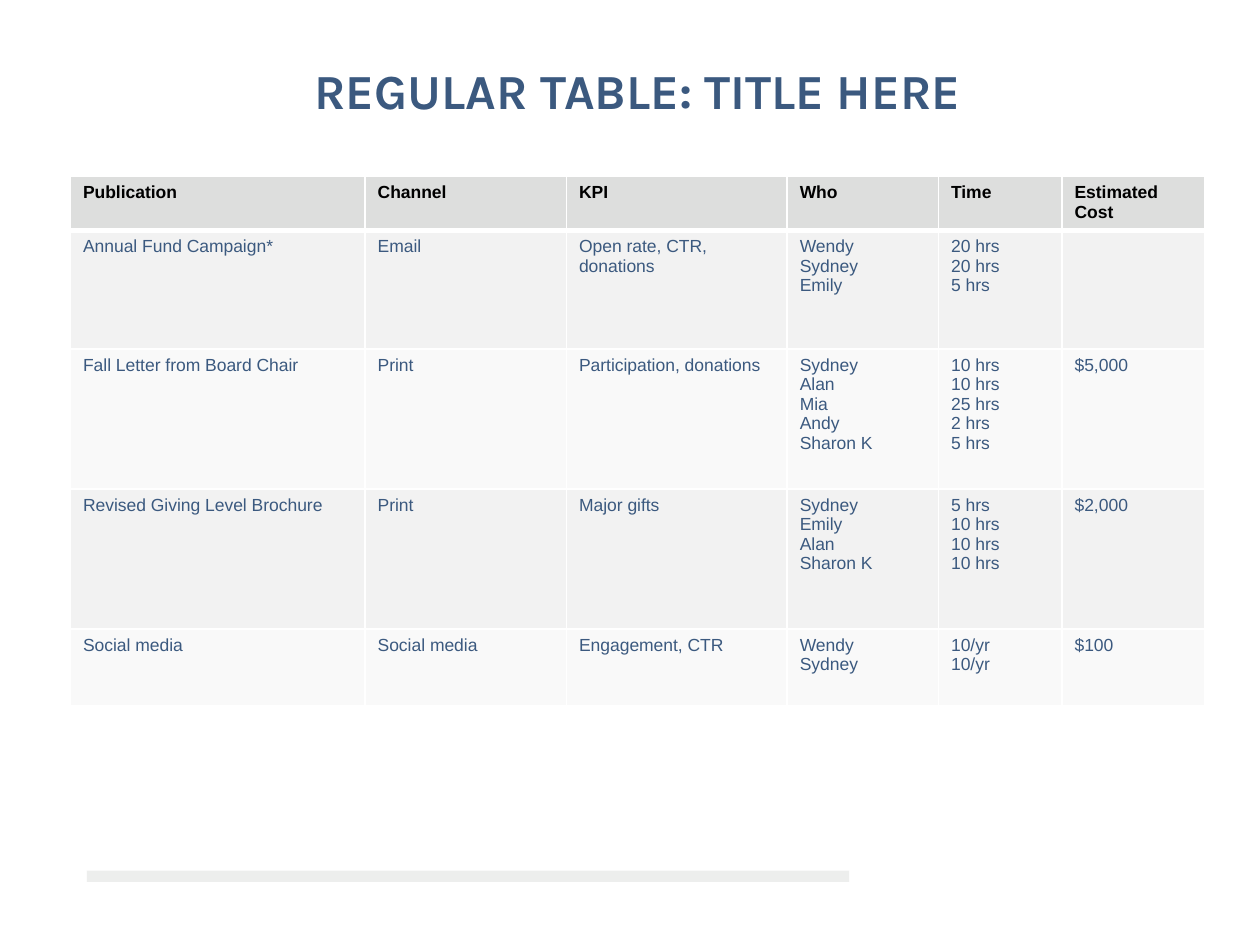
"""Build a slide with a publication planning table."""
import pptx
import pptx.dml.color
import pptx.enum.shapes
import pptx.enum.text
import pptx.oxml
import pptx.oxml.ns
import pptx.util
from pptx.util import Cm

TITLE = "REGULAR TABLE: TITLE HERE"
HEADS = ["Publication", "Channel", "KPI", "Who", "Time", "Estimated Cost"]
ROWS = [
    ["Annual Fund Campaign*", "Email", "Open rate, CTR, donations",
     "Wendy\nSydney\nEmily", "20 hrs\n20 hrs\n5 hrs", ""],
    ["Fall Letter from Board Chair", "Print", "Participation, donations",
     "Sydney\nAlan\nMia\nAndy\nSharon K",
     "10 hrs\n10 hrs\n25 hrs\n2 hrs\n5 hrs", "$5,000"],
    ["Revised Giving Level Brochure", "Print", "Major gifts",
     "Sydney\nEmily\nAlan\nSharon K",
     "5 hrs\n10 hrs\n10 hrs\n10 hrs", "$2,000"],
    ["Social media", "Social media", "Engagement, CTR",
     "Wendy\nSydney", "10/yr\n10/yr", "$100"],
]
WIDTHS = [5.94, 4.06, 4.45, 3.05, 2.49, 2.87]
HEIGHTS = [1.09, 2.39, 2.82, 2.82, 1.55]
LEFT, TOP = 1.42, 3.56
THEME = {
    "blue": "3B597F", "black": "000000", "white": "FFFFFF", "gray": "DDDEDD",
    "bands": ["F2F2F2", "F9F9F9"],
    "head font": "Karla", "body font": "Arial", "head size": 28, "body size": 10,
    "thin": 1, "thick": 3,
}


def tint(fill, color):
    """Fill with one solid colour."""
    fill.solid()
    fill.fore_color.rgb = pptx.dml.color.RGBColor.from_string(color)


def write(frame, text, font="body font", size="body size", color="blue",
          bold=False, align=None, space=None):
    """Put formatted text in a frame, one paragraph a line."""
    frame.text = text
    for para in frame.paragraphs:
        para.alignment = align
        para.line_spacing = space
        para.font.size = pptx.util.Pt(THEME[size])
        for item in [para.font] + [run.font for run in para.runs]:
            item.name = THEME[font]
            item.size = pptx.util.Pt(THEME[size])
            item.bold = bold
            tint(item.fill, THEME[color])


def edge(cell, **sides):
    """Draw white cell borders, widths in points by side."""
    props = cell._tc.get_or_add_tcPr()
    for side, width in sides.items():
        props.append(pptx.oxml.parse_xml(
            f'<a:ln{side} {pptx.oxml.ns.nsdecls("a")} w="{pptx.util.Pt(width)}">'
            f'<a:solidFill><a:srgbClr val="{THEME["white"]}"/></a:solidFill>'
            f'</a:ln{side}>'))


def add_bar(slide):
    """Draw the half-clear bar at the foot."""
    bar = slide.shapes.add_shape(pptx.enum.shapes.MSO_SHAPE.RECTANGLE,
                                 Cm(1.75), Cm(17.55), Cm(15.37), Cm(0.23))
    bar.shadow.inherit = False
    bar.line.fill.background()
    tint(bar.fill, THEME["gray"])
    color = bar.fill._xPr.find(".//" + pptx.oxml.ns.qn("a:srgbClr"))
    color.append(pptx.oxml.parse_xml(
        f'<a:alpha {pptx.oxml.ns.nsdecls("a")} val="50000"/>'))


def add_title(slide):
    """Place and format the title."""
    title = slide.shapes.title
    title.left, title.top = Cm(LEFT), Cm(1.22)
    title.width, title.height = Cm(sum(WIDTHS)), Cm(1.04)
    frame = title.text_frame
    frame.auto_size = pptx.enum.text.MSO_AUTO_SIZE.NONE
    frame.vertical_anchor = pptx.enum.text.MSO_ANCHOR.TOP
    write(frame, TITLE, font="head font", size="head size", bold=True,
          align=pptx.enum.text.PP_ALIGN.CENTER, space=0.9)


def add_grid(slide):
    """Build the table with its header and banded rows."""
    grid = slide.shapes.add_table(
        len(HEIGHTS), len(WIDTHS), Cm(LEFT), Cm(TOP),
        Cm(sum(WIDTHS)), Cm(sum(HEIGHTS))).table
    grid.horz_banding = False
    for col, width in zip(grid.columns, WIDTHS):
        col.width = Cm(width)
    for row, height in zip(grid.rows, HEIGHTS):
        row.height = Cm(height)
    thin, thick = THEME["thin"], THEME["thick"]
    for i, line in enumerate([HEADS] + ROWS):
        head = i == 0
        for j, text in enumerate(line):
            cell = grid.cell(i, j)
            write(cell.text_frame, text, bold=head,
                  color="black" if head else "blue")
            edge(cell, L=thin, R=thin, T=thick if i == 1 else thin,
                 B=thick if head else thin)
            tint(cell.fill, THEME["gray"] if head else THEME["bands"][(i - 1) % 2])


def main():
    """Make the deck and save it."""
    deck = pptx.Presentation()
    deck.slide_width, deck.slide_height = Cm(25.4), Cm(19.05)
    slide = deck.slides.add_slide(deck.slide_layouts[5])
    add_bar(slide)
    add_title(slide)
    add_grid(slide)
    deck.save("out.pptx")


if __name__ == "__main__":
    main()
